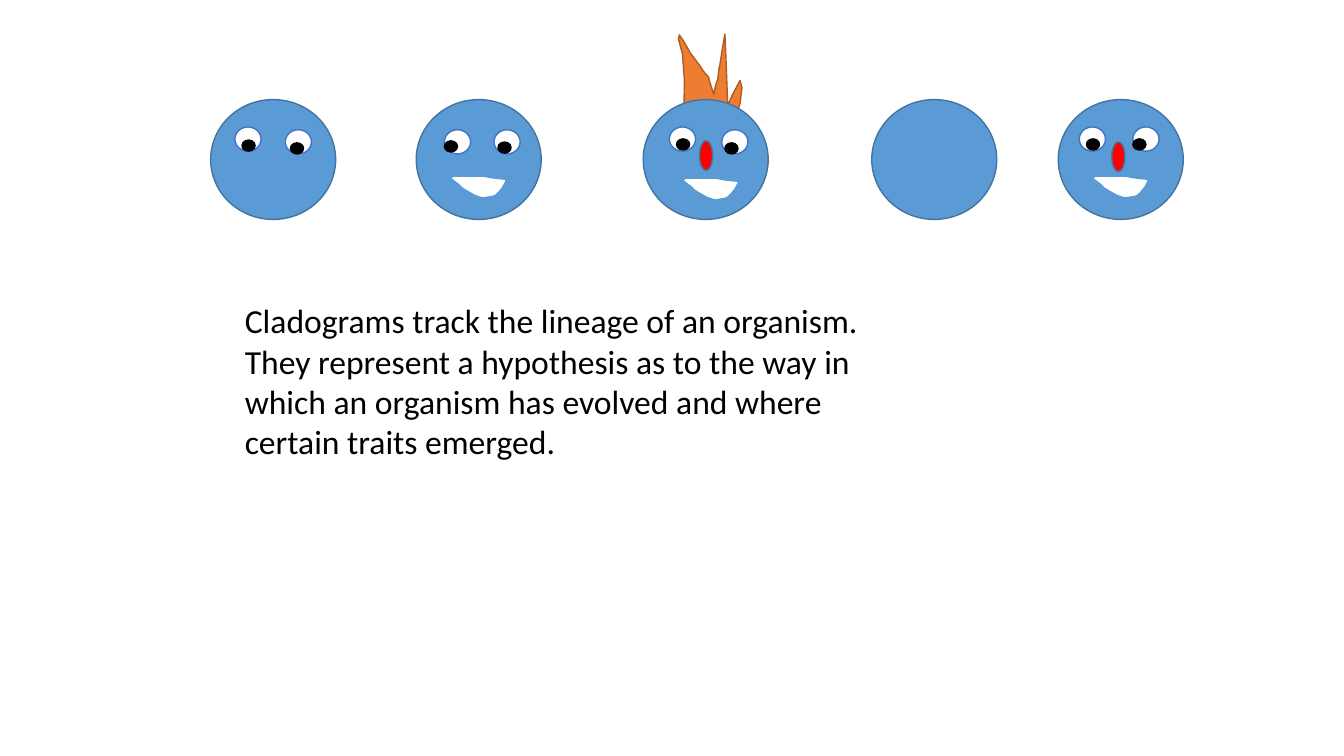
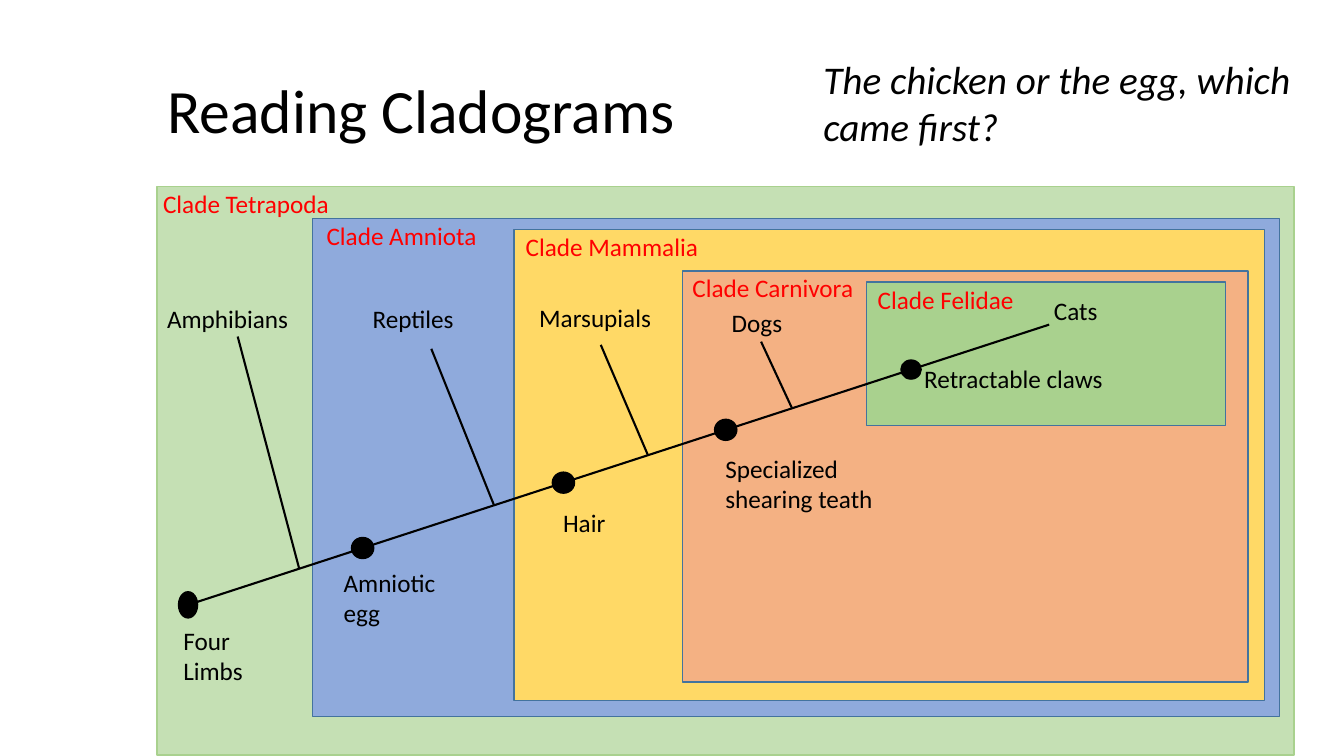
from dataclasses import dataclass

from lxml import etree
from pptx import Presentation
from pptx import util as u
from pptx.dml.color import RGBColor
from pptx.enum import shapes as kinds, text as styles
from pptx.oxml.ns import qn


@dataclass(frozen=True)
class Theme:
    font: str = "Calibri"
    title_size: int = 44
    question_size: int = 28
    intro_size: int = 24
    label_size: int = 18
    black: str = "000000"
    white: str = "FFFFFF"
    red: str = "FF0000"
    skin: str = "5B9BD5"
    outline: str = "43739E"
    eye_line: str = "4472C4"
    hair: str = "ED7D31"
    hair_line: str = "AF5C24"
    pale_green: str = "C5E0B4"
    green: str = "A9D18E"
    blue: str = "8FAADC"
    yellow: str = "FFD966"
    orange: str = "F4B183"


THEME = Theme()

# All lengths are centimetres.
SLIDE_SIZE = (33.87, 19.05)

INTRO = ("Cladograms track the lineage of an organism. They represent a hypothesis "
         "as to the way in which an organism has evolved and where certain traits emerged.")
INTRO_BOX = (5.92, 7.44, 16.41, 4.37)

FACE_TOP, FACE_SIZE = 2.51, (3.15, 3.02)
# Size, fill and line of each round facial part
FACE_PARTS = {
    "eyes": ((0.66, 0.61), THEME.white, THEME.eye_line),
    "pupils": ((0.33, 0.28), THEME.black, THEME.black),
    "nose": ((0.33, 0.74), THEME.red, THEME.outline),
}
# Positions of parts are measured from the top left of the face
FACES = [
    {"left": 5.31, "eyes": [(0.61, 0.69), (1.88, 0.76)],
     "pupils": [(0.79, 1.02), (2.01, 1.09)]},
    {"left": 10.49, "eyes": [(0.71, 0.76), (1.96, 0.76)],
     "pupils": [(0.71, 1.04), (2.06, 1.07)], "mouth": (0.86, 1.93)},
    {"left": 16.21, "eyes": [(0.66, 0.69), (1.98, 0.76)],
     "pupils": [(0.84, 0.99), (2.06, 1.09)], "nose": [(1.42, 1.04)],
     "mouth": (0.99, 1.98), "hair": (0, 0)},
    {"left": 21.97},
    {"left": 26.67, "eyes": [(0.53, 0.69), (1.88, 0.69)],
     "pupils": [(0.71, 0.99), (1.88, 0.99)], "nose": [(1.35, 1.07)],
     "mouth": (0.86, 1.93)},
]
MOUTH = [
    (0, 0.05), (0.13, 0.15), (0.2, 0.2), (0.3, 0.3), (0.43, 0.38), (0.61, 0.48),
    (0.69, 0.51), (0.81, 0.55), (1.07, 0.51), (1.14, 0.48), (1.24, 0.38),
    (1.32, 0.28), (1.4, 0.13), (1.4, 0.08), (1.12, 0.05), (0.99, 0.03),
    (0.84, 0), (0.28, 0), (0.08, 0),
]
HAIR = [
    (1.02, 0.56), (1.04, -0.48), (0.99, -1.14), (0.97, -1.22), (0.89, -1.52),
    (0.91, -1.63), (1.02, -1.47), (1.19, -1.17), (1.4, -0.89), (1.52, -0.71),
    (1.65, -0.56), (1.68, -0.43), (1.78, -0.13), (1.83, -0.38), (1.88, -0.51),
    (1.91, -0.79), (1.93, -0.86), (2.01, -1.37), (2.06, -1.65), (2.08, -1.19),
    (2.13, 0.15), (2.24, -0.1), (2.44, -0.48), (2.49, -0.3), (2.44, 0.1),
    (2.31, 0.53), (2.29, 0.64), (1.83, 0.51), (1.12, 0.51),
]

TITLE, TITLE_BOX = "Reading Cladograms", (3.96, 1.02, 27.56, 3.68)
QUESTION = "The chicken or the egg, which came first?"
QUESTION_BOX = (20.5, 1.27, 13.36, 2.64)

# Name, box, fill, line, shift of the label from the left edge
CLADES = [
    ("Clade Tetrapoda", (3.96, 4.7, 28.65, 14.33), THEME.pale_green, THEME.green, -0.1),
    ("Clade Amniota", (7.87, 5.51, 24.38, 12.55), THEME.blue, THEME.outline, 0.11),
    ("Clade Mammalia", (12.95, 5.79, 18.92, 11.86), THEME.yellow, THEME.outline, 0.05),
    ("Clade Carnivora", (17.2, 6.83, 14.25, 10.36), THEME.orange, THEME.outline, 0),
    ("Clade Felidae", (21.84, 7.11, 9.04, 3.61), THEME.green, THEME.outline, 0.03),
]
CLADE_LABEL_RISE, CLADE_LABEL_WIDTH = 0.08, 5.2
LINE_HEIGHT = 1.02

TRUNK = ((4.5, 15.32), (26.44, 8.18))
# Name, label position, x where the branch leaves the trunk, tip of the branch
ANIMALS = [
    ("Amphibians", (3.96, 7.52), 7.54, (5.99, 8.48)),
    ("Reptiles", (9.14, 7.52), 12.45, (10.87, 8.79)),
    ("Marsupials", (13.34, 7.49), 16.33, (15.14, 8.69)),
    ("Dogs", (18.19, 7.62), 19.96, (19.18, 8.61)),
    ("Cats", (26.31, 7.32), None, None),
]
ANIMAL_WIDTH = 3.6
# Name, x of the dot centre, dot size, label position, label width
TRAITS = [
    ("Four Limbs", 4.74, (0.48, 0.66), (4.37, 15.62), 3.05),
    ("Amniotic egg", 9.14, (0.56, 0.53), (8.41, 14.17), 3.58),
    ("Hair", 14.2, (0.56, 0.53), (13.94, 12.67), 2.39),
    ("Specialized shearing teath", 18.29, (0.56, 0.53), (18.03, 11.3), 5.18),
    ("Retractable claws", 22.96, (0.51, 0.48), (23.04, 9.02), 5.61),
]


def cm(values):
    return [u.Cm(value) for value in values]


def color(code):
    return RGBColor.from_string(code)


def paint(shape, fill, line):
    shape.shadow.inherit = False
    shape.fill.solid()
    shape.fill.fore_color.rgb = color(fill)
    shape.line.color.rgb = color(line)
    shape.line.width = u.Pt(1)


def add_filled(shapes, kind, box, fill, line):
    paint(shapes.add_shape(kind, *cm(box)), fill, line)


def add_outline(shapes, points, origin, fill, line):
    """Draw a closed outline whose points are measured from origin."""
    start, *rest = [cm((origin[0] + x, origin[1] + y)) for x, y in points]
    builder = shapes.build_freeform(*start)
    builder.add_line_segments(rest, close=True)
    paint(builder.convert_to_shape(), fill, line)


def write(shape, words, size, fill=THEME.black, italic=False):
    frame = shape.text_frame
    frame.text = words
    frame.word_wrap = True
    paragraph = frame.paragraphs[0]
    paragraph.alignment = styles.PP_ALIGN.LEFT
    font = paragraph.runs[0].font
    font.name, font.size, font.italic = THEME.font, u.Pt(size), italic
    font.color.rgb = color(fill)


def add_text(slide, box, words, size=THEME.label_size, **look):
    write(slide.shapes.add_textbox(*cm(box)), words, size, **look)


def add_line(slide, start, end):
    line = slide.shapes.add_connector(
        kinds.MSO_CONNECTOR.STRAIGHT, *cm(start), *cm(end))
    line.line.color.rgb = color(THEME.black)
    line.line.width = u.Pt(1.5)
    etree.SubElement(line._element.spPr, qn("a:effectLst"))


def trunk_y(x):
    (x1, y1), (x2, y2) = TRUNK
    return y1 + (x - x1) * (y2 - y1) / (x2 - x1)


def add_face(slide, face):
    shapes = slide.shapes.add_group_shape().shapes
    left, oval = face["left"], kinds.MSO_SHAPE.OVAL
    if "hair" in face:
        add_outline(shapes, HAIR, (left, FACE_TOP), THEME.hair, THEME.hair_line)
    add_filled(shapes, oval, (left, FACE_TOP, *FACE_SIZE), THEME.skin, THEME.outline)
    for part, (size, fill, line) in FACE_PARTS.items():
        for x, y in face.get(part, []):
            add_filled(shapes, oval, (left + x, FACE_TOP + y, *size), fill, line)
    if "mouth" in face:
        x, y = face["mouth"]
        add_outline(shapes, MOUTH, (left + x, FACE_TOP + y), THEME.white, THEME.skin)


def build_faces_slide(presentation):
    slide = presentation.slides.add_slide(presentation.slide_layouts[6])
    for face in FACES:
        add_face(slide, face)
    add_text(slide, INTRO_BOX, INTRO, THEME.intro_size)


def build_cladogram_slide(presentation):
    slide = presentation.slides.add_slide(presentation.slide_layouts[5])
    title = slide.shapes.title
    title.left, title.top, title.width, title.height = cm(TITLE_BOX)
    write(title, TITLE, THEME.title_size)
    title.text_frame.auto_size = styles.MSO_AUTO_SIZE.NONE
    title.text_frame.vertical_anchor = styles.MSO_ANCHOR.MIDDLE
    title.text_frame.paragraphs[0].line_spacing = 0.9

    for name, box, fill, line, shift in CLADES:
        add_filled(slide.shapes, kinds.MSO_SHAPE.RECTANGLE, box, fill, line)
    for name, (left, top, *_), fill, line, shift in CLADES:
        label_box = (left + shift, top - CLADE_LABEL_RISE, CLADE_LABEL_WIDTH, LINE_HEIGHT)
        add_text(slide, label_box, name, fill=THEME.red)

    add_line(slide, *TRUNK)
    for name, position, base, tip in ANIMALS:
        if tip:
            add_line(slide, (base, trunk_y(base)), tip)
        add_text(slide, (*position, ANIMAL_WIDTH, LINE_HEIGHT), name)
    for name, x, (width, height), position, label_width in TRAITS:
        dot_box = (x - width / 2, trunk_y(x) - height / 2, width, height)
        add_filled(slide.shapes, kinds.MSO_SHAPE.OVAL, dot_box, THEME.black, THEME.black)
        add_text(slide, (*position, label_width, LINE_HEIGHT), name)
    add_text(slide, QUESTION_BOX, QUESTION, THEME.question_size, italic=True)


def main():
    presentation = Presentation()
    presentation.slide_width, presentation.slide_height = cm(SLIDE_SIZE)
    build_faces_slide(presentation)
    build_cladogram_slide(presentation)
    presentation.save("out.pptx")


if __name__ == "__main__":
    main()
